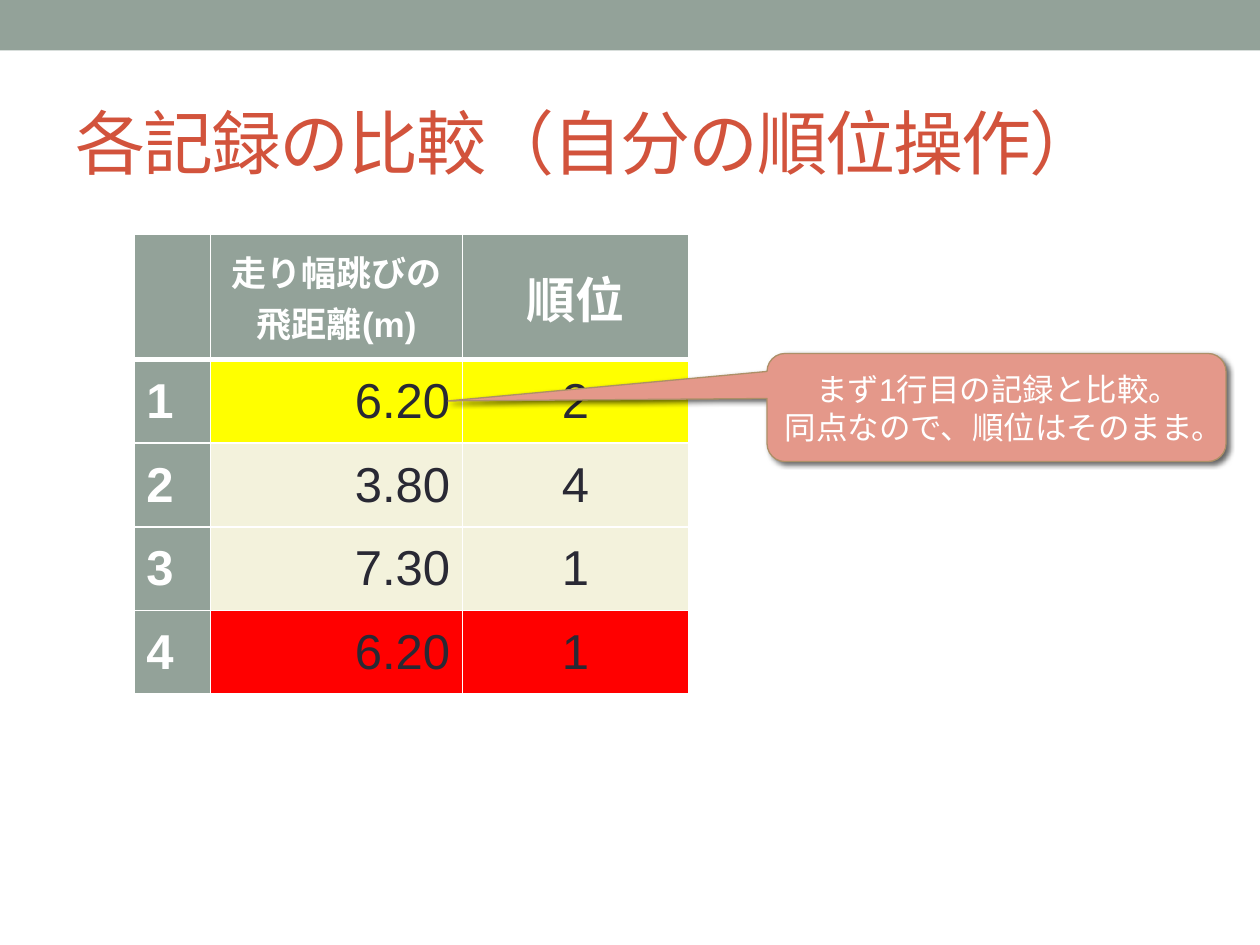
"""Build a slide that compares long-jump records and their ranks."""
from lxml import etree
from pptx import Presentation
from pptx.dml.color import RGBColor
from pptx.enum.shapes import MSO_SHAPE
from pptx.enum.text import MSO_ANCHOR, PP_ALIGN
from pptx.oxml.ns import qn
from pptx.util import Pt

RECT = MSO_SHAPE.RECTANGLE
CALLOUT = MSO_SHAPE.ROUNDED_RECTANGULAR_CALLOUT
MIDDLE = MSO_ANCHOR.MIDDLE
LEFT, CENTER, RIGHT = PP_ALIGN.LEFT, PP_ALIGN.CENTER, PP_ALIGN.RIGHT

SAGE = RGBColor(0x93, 0xA2, 0x99)
WHITE = RGBColor(0xFF, 0xFF, 0xFF)
DARK = RGBColor(0x29, 0x29, 0x34)
CREAM = RGBColor(0xF3, 0xF2, 0xDC)
YELLOW = RGBColor(0xFF, 0xFF, 0x00)
RED = RGBColor(0xFF, 0x00, 0x00)
RUST = RGBColor(0xD2, 0x53, 0x3C)
SALMON = RGBColor(0xE4, 0x98, 0x8A)
TAN = RGBColor(0xAD, 0x8F, 0x67)


def write(tf, lines, size, color, align=LEFT, bold=False):
    for i, line in enumerate(lines):
        p = tf.paragraphs[0] if i == 0 else tf.add_paragraph()
        p.alignment = align
        r = p.add_run()
        r.text = line
        r.font.name = "Arial"
        r.font.size = Pt(size)
        r.font.bold = bold
        r.font.color.rgb = color


def add_border(cell, side, width):
    ln = etree.SubElement(cell._tc.get_or_add_tcPr(), qn("a:ln" + side), w=str(Pt(width)))
    fill = etree.SubElement(ln, qn("a:solidFill"))
    etree.SubElement(fill, qn("a:srgbClr"), val=str(WHITE))


prs = Presentation()
prs.slide_width, prs.slide_height = Pt(720), Pt(540)
s = prs.slides.add_slide(prs.slide_layouts[6])

bar = s.shapes.add_shape(RECT, 0, 0, Pt(720), Pt(28.8))
bar.shadow.inherit = False
bar.fill.solid()
bar.fill.fore_color.rgb = SAGE
bar.line.fill.background()

rows = [
    ([], ["走り幅跳びの", "飛距離(m)"], ["順位"]),
    (["1"], ["6.20"], ["2"]),
    (["2"], ["3.80"], ["4"]),
    (["3"], ["7.30"], ["1"]),
    (["4"], ["6.20"], ["1"]),
]
row_fills = [SAGE, YELLOW, CREAM, CREAM, RED]
col_widths = [43.9, 144, 129]
col_aligns = [LEFT, RIGHT, CENTER]

frame = s.shapes.add_table(5, 3, Pt(76.5), Pt(134), Pt(sum(col_widths)), Pt(263))
table = frame.table
for column, width in zip(table.columns, col_widths):
    column.width = Pt(width)
for i, row in enumerate(rows):
    table.rows[i].height = Pt(47.8 if i else 71.5)
    for j, lines in enumerate(row):
        cell = table.cell(i, j)
        for side in "LRTB":
            header_edge = (i, side) in ((0, "B"), (1, "T"))
            add_border(cell, side, 3 if header_edge else 1)
        heading = i == 0 or j == 0
        cell.fill.solid()
        cell.fill.fore_color.rgb = SAGE if heading else row_fills[i]
        cell.vertical_anchor = MIDDLE
        write(cell.text_frame, lines, 20 if (i, j) == (0, 1) else 28,
              WHITE if heading else DARK, col_aligns[j] if i else CENTER, heading)

sp = s.shapes.add_shape(CALLOUT, Pt(438.3), Pt(202), Pt(262.3), Pt(61.8))
for k, value in enumerate([-1.195, -0.061, 0.167]):
    sp.adjustments[k] = value
sp.fill.solid()
sp.fill.fore_color.rgb = SALMON
sp.line.color.rgb = TAN
sp.line.width = Pt(0.75)
sp.shadow.inherit = False
effects = sp._element.spPr.find(qn("a:effectLst"))
shadow = etree.SubElement(effects, qn("a:outerShdw"), blurRad=str(Pt(3)),
                          dist=str(Pt(2)), dir="2700000", rotWithShape="0")
shade = etree.SubElement(shadow, qn("a:srgbClr"), val="000000")
etree.SubElement(shade, qn("a:alpha"), val="60000")
tf = sp.text_frame
tf.word_wrap = True
tf.vertical_anchor = MIDDLE
write(tf, ["　まず1行目の記録と比較。同点なので、順位はそのまま。"], 18, WHITE)

title = s.shapes.add_textbox(Pt(36), Pt(42), Pt(648), Pt(78))
tf = title.text_frame
tf.word_wrap = True
tf.vertical_anchor = MIDDLE
write(tf, ["各記録の比較（自分の順位操作）"], 40, RUST)
tf.paragraphs[0].runs[0].font._element.set("spc", "-100")

prs.save("out.pptx")
